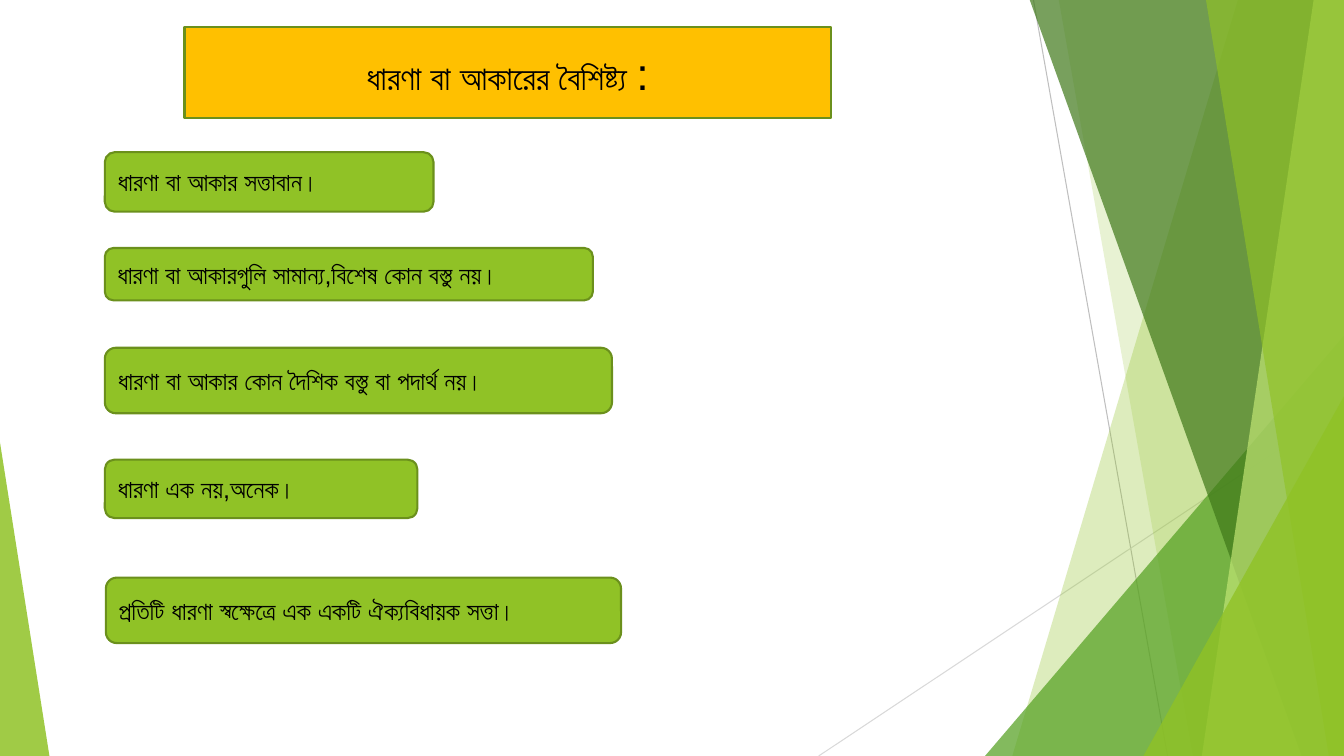
from dataclasses import dataclass

import pptx
import pptx.dml.color
import pptx.enum.shapes
import pptx.enum.text
import pptx.oxml
import pptx.oxml.ns
import pptx.util

RGBColor = pptx.dml.color.RGBColor
Shapes = pptx.enum.shapes.MSO_SHAPE
Align = pptx.enum.text.PP_ALIGN
qn = pptx.oxml.ns.qn

PX = 9144  # EMU in one px, at 100 px to the inch
PAGE_WIDTH, PAGE_HEIGHT = 1333, 750
FONT = "Arial"

BLACK = RGBColor(0x00, 0x00, 0x00)
GREEN = RGBColor(0x90, 0xC2, 0x26)
OUTLINE = RGBColor(0x6B, 0x90, 0x1C)
LEAF = RGBColor(0x54, 0xA0, 0x21)
FOREST = RGBColor(0x3F, 0x78, 0x19)
LIME = RGBColor(0xC0, 0xE4, 0x74)
AMBER = RGBColor(0xFF, 0xC0, 0x00)
GREY = RGBColor(0xBF, 0xBF, 0xBF)
PALE_GREY = RGBColor(0xD9, 0xD9, 0xD9)


@dataclass(frozen=True)
class Ray:
    start: tuple[int, int]
    end: tuple[int, int]
    colour: RGBColor


@dataclass(frozen=True)
class Pane:
    """A slanted left edge, filled from there to the right edge of the page."""
    top_x: int
    bottom_x: int
    colour: RGBColor
    opacity: int


@dataclass(frozen=True)
class Corner:
    """A right triangle standing on the bottom edge; apex is 0 left, 1 right."""
    left: int
    top: int
    width: int
    apex: int
    colour: RGBColor
    opacity: int


@dataclass(frozen=True)
class Feature:
    left: int
    top: int
    width: int
    height: int
    text: str


RAYS = [
    Ray((1025, 0), (1158, 750), GREY),
    Ray((1333, 403), (812, 750), PALE_GREY),
]
FACETS = [
    Pane(1228, 1004, GREEN, 30),
    Pane(1050, 1183, GREEN, 20),
    Corner(977, 333, 356, 1, LEAF, 72),
    Pane(1021, 1291, FOREST, 70),
    Pane(1303, 1192, LIME, 70),
    Pane(1196, 1318, GREEN, 65),
    Corner(1134, 393, 199, 1, GREEN, 80),
    Corner(0, 439, 49, 0, GREEN, 85),
]
FEATURES = [
    Feature(104, 151, 326, 59, "ধারণা বা আকার সত্তাবান।"),
    Feature(104, 246, 484, 52, "ধারণা বা আকারগুলি সামান্য,বিশেষ কোন বস্তু নয়।"),
    Feature(104, 345, 503, 65, "ধারণা বা আকার কোন দৈশিক বস্তু বা পদার্থ নয়।"),
    Feature(104, 456, 310, 58, "ধারণা এক নয়,অনেক।"),
    Feature(105, 573, 511, 65, "প্রতিটি ধারণা স্বক্ষেত্রে এক একটি ঐক্যবিধায়ক সত্তা।"),
]
TITLE_PLACE = {"left": 183, "top": 27, "width": 641, "height": 90}
TITLE_SPANS = [("ধারণা বা আকারের বৈশিষ্ট্য ", 24), (":", 32)]


def px(*lengths: int) -> list[int]:
    return [length * PX for length in lengths]


def paint(shape, colour: RGBColor, opacity: int = 100) -> None:
    shape.fill.solid()
    shape.fill.fore_color.rgb = colour
    if opacity < 100:
        colour_node = shape.fill._xPr.find(qn("a:solidFill"))[0]
        alpha = pptx.oxml.parse_xml(
            f'<a:alpha {pptx.oxml.ns.nsdecls("a")} val="{opacity * 1000}"/>')
        colour_node.append(alpha)


def outline(shape) -> None:
    shape.line.color.rgb = OUTLINE
    shape.line.width = pptx.util.Pt(1.5)


def write(shape, spans: list[tuple[str, int]], alignment: Align) -> None:
    frame = shape.text_frame
    frame_format = {
        "word_wrap": True,
        "auto_size": pptx.enum.text.MSO_AUTO_SIZE.NONE,
        "vertical_anchor": pptx.enum.text.MSO_ANCHOR.MIDDLE,
    }
    for name, value in frame_format.items():
        setattr(frame, name, value)
    para = frame.paragraphs[0]
    para.alignment = alignment
    for text, size in spans:
        span = para.add_run()
        span.text = text
        for name, value in {"name": FONT, "size": pptx.util.Pt(size)}.items():
            setattr(span.font, name, value)
        span.font.color.rgb = BLACK
        script_font = pptx.oxml.parse_xml(
            f'<a:cs {pptx.oxml.ns.nsdecls("a")} typeface="{FONT}"/>')
        span.font._element.append(script_font)


def draw_ray(page, ray: Ray) -> None:
    line = page.shapes.add_connector(
        pptx.enum.shapes.MSO_CONNECTOR.STRAIGHT, *px(*ray.start, *ray.end))
    line.line.color.rgb = ray.colour
    line.line.width = pptx.util.Pt(0.75)
    line._element.spPr.append(pptx.oxml.parse_xml(
        f'<a:effectLst {pptx.oxml.ns.nsdecls("a")}/>'))


def draw_facet(page, facet: Pane | Corner) -> None:
    if isinstance(facet, Pane):
        builder = page.shapes.build_freeform(facet.top_x, -1, scale=PX)
        builder.add_line_segments([
            (PAGE_WIDTH, -1), (PAGE_WIDTH, PAGE_HEIGHT),
            (facet.bottom_x, PAGE_HEIGHT)])
        shape = builder.convert_to_shape()
    else:
        shape = page.shapes.add_shape(
            Shapes.ISOSCELES_TRIANGLE,
            *px(facet.left, facet.top, facet.width, PAGE_HEIGHT - facet.top))
        shape.adjustments[0] = facet.apex
    shape.shadow.inherit = False
    shape.line.fill.background()
    paint(shape, facet.colour, facet.opacity)


def draw_feature(page, feature: Feature) -> None:
    box = page.shapes.add_shape(
        Shapes.ROUNDED_RECTANGLE,
        *px(feature.left, feature.top, feature.width, feature.height))
    box.shadow.inherit = False
    paint(box, GREEN)
    outline(box)
    write(box, [(feature.text, 18)], Align.LEFT)


def draw_title(page) -> None:
    """Give the title placeholder its hexagon outline, fill and text."""
    title = page.shapes.title
    for name, length in TITLE_PLACE.items():
        setattr(title, name, length * PX)
    title._element.spPr.append(pptx.oxml.parse_xml(
        f'<a:prstGeom {pptx.oxml.ns.nsdecls("a")} prst="flowChartPreparation">'
        '<a:avLst/></a:prstGeom>'))
    paint(title, AMBER)
    outline(title)
    write(title, TITLE_SPANS, Align.CENTER)


def main() -> None:
    deck = pptx.Presentation()
    deck.slide_width, deck.slide_height = px(PAGE_WIDTH, PAGE_HEIGHT)
    page = deck.slides.add_slide(deck.slide_layouts.get_by_name("Title Only"))
    for ray in RAYS:
        draw_ray(page, ray)
    for facet in FACETS:
        draw_facet(page, facet)
    for feature in FEATURES:
        draw_feature(page, feature)
    draw_title(page)
    deck.save("out.pptx")


if __name__ == "__main__":
    main()
